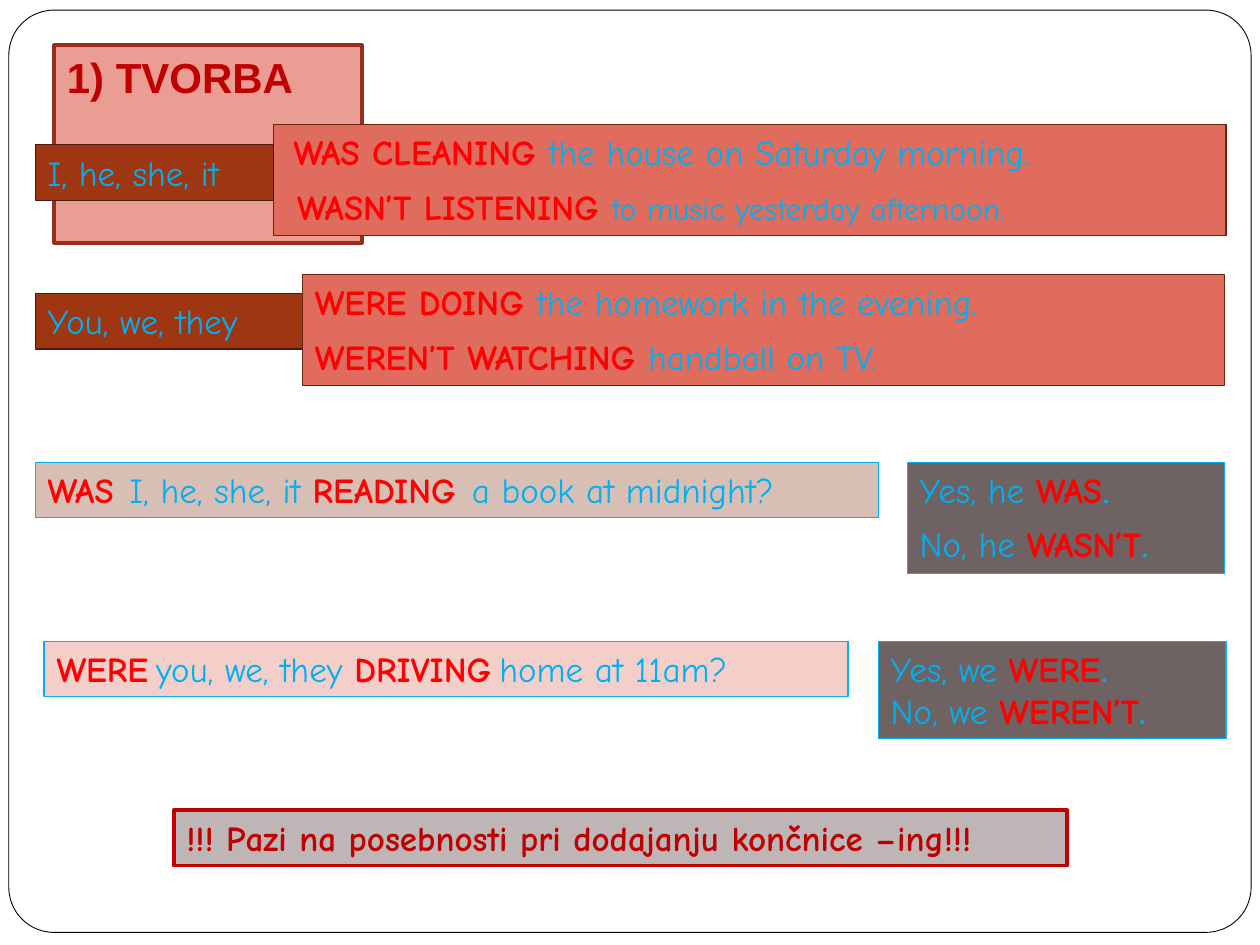
from dataclasses import dataclass

from pptx import Presentation
from pptx.dml.color import RGBColor
from pptx.enum.shapes import MSO_SHAPE as Preset
from pptx.enum.text import MSO_ANCHOR as Anchor, MSO_AUTO_SIZE as AutoSize, PP_ALIGN as Align
from pptx.util import Inches, Pt


@dataclass(frozen=True)
class Theme:
    """Colours, fonts and type sizes."""
    white: str = "FFFFFF"
    black: str = "000000"
    verb: str = "FF0000"
    plain: str = "00B0F0"
    accent: str = "C00000"
    title_fill: str = "E99D93"
    title_line: str = "9B2D1F"
    statement_fill: str = "DF6C5D"
    statement_line: str = "69240C"
    subject_fill: str = "9E3611"
    subject_line: str = "4E1710"
    was_fill: str = "D8BFB6"
    were_fill: str = "F4CEC9"
    answer_fill: str = "6E6263"
    warning_fill: str = "BDB5B6"
    title_font: str = "Arial"
    body_font: str = "Comic Neue"
    serif_font: str = "Times New Roman"
    title_size: float = 24
    body_size: float = 20
    small_size: float = 18
    thin: float = 0.75
    thick: float = 2.25


THEME = Theme()


@dataclass(frozen=True)
class Piece:
    """A stretch of text in one format."""
    text: str
    color: str = THEME.plain
    bold: bool = False
    size: float = THEME.body_size
    font: str = THEME.body_font
    spacing: float = 0


@dataclass(frozen=True)
class Line:
    """One paragraph of a box."""
    pieces: tuple[Piece, ...]
    indent: float = 0


@dataclass(frozen=True)
class Box:
    """A filled rectangle with its text."""
    left: float
    top: float
    width: float
    height: float
    fill: str
    line: str
    lines: tuple[Line, ...]
    gap: float = 7
    weight: float = THEME.thin


def verb(text: str) -> Piece:
    """Return a highlighted verb form."""
    return Piece(text, THEME.verb, bold=True)


def serif(text: str, spacing: float = 0) -> Piece:
    """Return a small serif mark or space."""
    return Piece(text, size=THEME.small_size, font=THEME.serif_font, spacing=spacing)


def row(*pieces: Piece, indent: float = 0) -> Line:
    """Return one line made of pieces."""
    return Line(pieces, indent)


def answer(start: str, form: str, stop: Piece) -> Line:
    """Return a short answer."""
    return row(Piece(start), verb(form), stop)


def write(paragraph, text: str, *, color: str, bold: bool, size: float, font: str,
          spacing: float = 0) -> None:
    """Append formatted text to a paragraph."""
    run = paragraph.add_run()
    run.text = text
    run.font.name = font
    run.font.size = Pt(size)
    run.font.bold = bold
    run.font.color.rgb = RGBColor.from_string(color)
    if spacing:
        run._r.get_or_add_rPr().set("spc", str(round(spacing * 100)))


def paint(shape, fill: str, line: str, weight: float) -> None:
    """Set the fill and outline of a shape."""
    shape.fill.solid()
    shape.fill.fore_color.rgb = RGBColor.from_string(fill)
    shape.line.color.rgb = RGBColor.from_string(line)
    shape.line.width = Pt(weight)


def fill_box(shape, box: Box) -> None:
    """Place, colour and write a box."""
    shape.left, shape.top = Inches(box.left), Inches(box.top)
    shape.width, shape.height = Inches(box.width), Inches(box.height)
    paint(shape, box.fill, box.line, box.weight)
    frame = shape.text_frame
    frame.word_wrap = True
    frame.auto_size = AutoSize.SHAPE_TO_FIT_TEXT
    frame.vertical_anchor = Anchor.TOP
    for index, line in enumerate(box.lines):
        paragraph = frame.add_paragraph() if index else frame.paragraphs[0]
        paragraph.alignment = Align.LEFT
        paragraph.line_spacing = 1.0
        paragraph.space_before = Pt(box.gap if index else 0)
        if line.indent:
            paragraph._p.get_or_add_pPr().set("marL", str(Pt(line.indent)))
        for piece in line.pieces:
            write(paragraph, piece.text, color=piece.color, bold=piece.bold, size=piece.size,
                  font=piece.font, spacing=piece.spacing)


def add_box(slide, box: Box) -> None:
    """Add a text rectangle to the slide."""
    shape = slide.shapes.add_shape(Preset.RECTANGLE, 0, 0, 0, 0)
    shape.shadow.inherit = False
    fill_box(shape, box)


def add_frame(slide) -> None:
    """Add the rounded page frame behind everything."""
    shape = slide.shapes.add_shape(
        Preset.ROUNDED_RECTANGLE, Inches(0.07), Inches(0.08), Inches(9.86), Inches(7.32))
    shape.shadow.inherit = False
    shape.adjustments[0] = 0.049
    paint(shape, THEME.white, THEME.black, 0.5)
    slide.shapes._spTree.insert(2, shape._element)


TITLE = Box(0.43, 0.36, 2.44, 0.5, THEME.title_fill, THEME.title_line, (
    row(Piece("1) TVORBA", THEME.accent, True, THEME.title_size, THEME.title_font)),
), weight=THEME.thick)

BOXES = (
    Box(2.17, 0.99, 7.56, 0.88, THEME.statement_fill, THEME.statement_line, (
        row(verb("WAS CLEANING "), Piece("the house on Saturday morning."), indent=4.5),
        row(verb("WASN’T LISTENING "),
            Piece("to music yesterday afternoon.", size=THEME.small_size), indent=6.5))),
    Box(0.28, 1.15, 1.89, 0.44, THEME.subject_fill, THEME.subject_line,
        (row(Piece("I, he, she, it")),)),
    Box(0.28, 2.33, 2.13, 0.44, THEME.subject_fill, THEME.subject_line,
        (row(Piece("You, we, they")),)),
    Box(2.4, 2.18, 7.32, 0.88, THEME.statement_fill, THEME.statement_line, (
        row(verb("WERE DOING "), Piece("the homework in the evening.")),
        row(verb("WEREN’T WATCHING "), Piece("handball on TV.")))),
    Box(0.28, 3.67, 6.69, 0.44, THEME.was_fill, THEME.plain, (
        row(verb("WAS"), serif(" ", 4.5), Piece("I, he, she, it "), verb("READING"),
            serif(" ", 4.5), Piece("a book at midnight?")),)),
    Box(7.2, 3.67, 2.52, 0.88, THEME.answer_fill, THEME.plain, (
        answer("Yes, he ", "WAS", serif(".")),
        answer("No, he ", "WASN’T", serif(".")))),
    Box(0.35, 5.09, 6.38, 0.44, THEME.were_fill, THEME.plain, (
        row(verb("WERE"), serif(" "), Piece("you, we, they "), verb("DRIVING"),
            serif(" "), Piece("home at 11am?")),)),
    Box(6.97, 5.09, 2.76, 0.77, THEME.answer_fill, THEME.plain, (
        answer("Yes, we ", "WERE", serif(".")),
        answer("No, we ", "WEREN’T", Piece(".", bold=True))), gap=0),
    Box(1.38, 6.43, 7.09, 0.44, THEME.warning_fill, THEME.accent, (
        row(Piece("!!! Pazi na posebnosti pri dodajanju končnice –ing!!!",
                  THEME.accent, True)),), weight=THEME.thick),
)


def main() -> None:
    """Build and save the slide."""
    presentation = Presentation()
    presentation.slide_width, presentation.slide_height = Inches(10), Inches(7.5)
    slide = presentation.slides.add_slide(presentation.slide_layouts.get_by_name("Title Only"))
    add_frame(slide)
    fill_box(slide.shapes.title, TITLE)
    for box in BOXES:
        add_box(slide, box)
    presentation.save("out.pptx")


if __name__ == "__main__":
    main()
